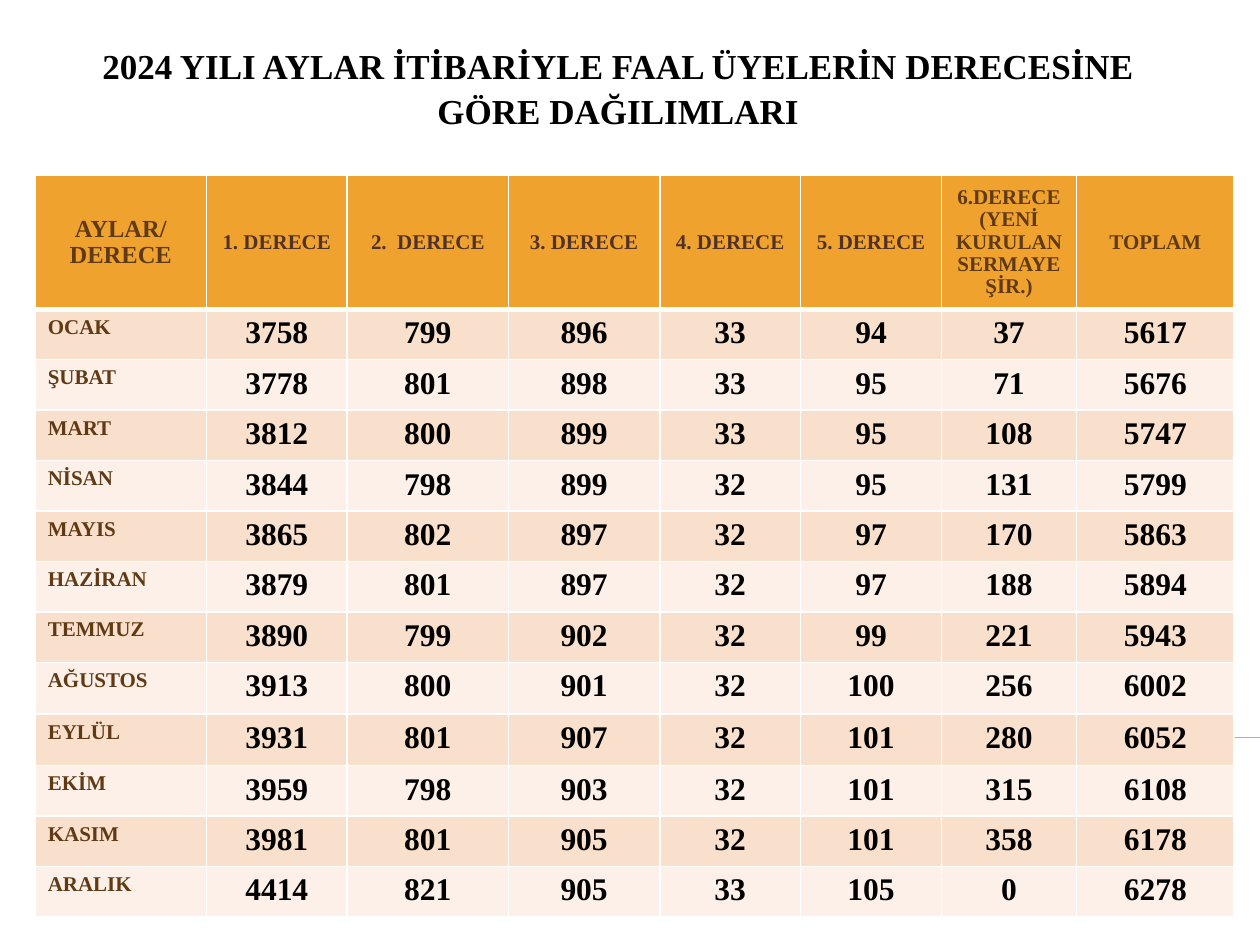
from lxml import etree
from pptx import Presentation
from pptx import util as u
from pptx.dml.color import RGBColor
from pptx.enum import shapes, text
from pptx.oxml import ns

FONT = "Times New Roman"
ORANGE, BROWN, DARK_BROWN = "F0A22E", "603A14", "523227"
BLACK, WHITE = "000000", "FFFFFF"
BANDS = ("F9E0CD", "FCF0E8")
THIN, THICK = 1, 3

TITLE = "2024 YILI AYLAR İTİBARİYLE FAAL ÜYELERİN DERECESİNE GÖRE DAĞILIMLARI"
HEADERS = [
    ("AYLAR/ DERECE", 14, BROWN),
    ("1. DERECE", 12, DARK_BROWN),
    ("2.  DERECE", 12, DARK_BROWN),
    ("3. DERECE", 12, DARK_BROWN),
    ("4. DERECE", 12, DARK_BROWN),
    ("5. DERECE", 12, DARK_BROWN),
    ("6.DERECE (YENİ KURULAN SERMAYE ŞİR.)", 12, BROWN),
    ("TOPLAM", 12, BROWN),
]
MONTHS = [
    ("OCAK", 3758, 799, 896, 33, 94, 37, 5617),
    ("ŞUBAT", 3778, 801, 898, 33, 95, 71, 5676),
    ("MART", 3812, 800, 899, 33, 95, 108, 5747),
    ("NİSAN", 3844, 798, 899, 32, 95, 131, 5799),
    ("MAYIS", 3865, 802, 897, 32, 97, 170, 5863),
    ("HAZİRAN", 3879, 801, 897, 32, 97, 188, 5894),
    ("TEMMUZ", 3890, 799, 902, 32, 99, 221, 5943),
    ("AĞUSTOS", 3913, 800, 901, 32, 100, 256, 6002),
    ("EYLÜL", 3931, 801, 907, 32, 101, 280, 6052),
    ("EKİM", 3959, 798, 903, 32, 101, 315, 6108),
    ("KASIM", 3981, 801, 905, 32, 101, 358, 6178),
    ("ARALIK", 4414, 821, 905, 33, 105, 0, 6278),
]
COLUMN_WIDTHS = [3.45, 2.84, 3.25, 3.05, 2.84, 2.84, 2.72, 3.18]
HEADER_HEIGHT, ROW_HEIGHT, TALL_ROW_HEIGHT = 2.68, 0.98, 1.04
TALL_MONTHS = ("AĞUSTOS", "EYLÜL")


def color(value):
    return RGBColor.from_string(value)


def write(frame, content, size, font_color, align, spacing=None):
    frame.word_wrap = True
    paragraph = frame.paragraphs[0]
    paragraph.text = content
    paragraph.alignment = align
    paragraph.line_spacing = spacing
    font = paragraph.font
    font.name, font.size, font.bold = FONT, u.Pt(size), True
    font.color.rgb = color(font_color)


def add_title(slide):
    shape = slide.shapes.add_textbox(u.Cm(0.71), u.Cm(0.74), u.Cm(23.5), u.Cm(1.6))
    shape.text_frame.vertical_anchor = text.MSO_ANCHOR.TOP
    write(shape.text_frame, TITLE, 20, BLACK, text.PP_ALIGN.CENTER, 1.05)


def add_rule(slide):
    rule = slide.shapes.add_connector(
        shapes.MSO_CONNECTOR.STRAIGHT, u.Cm(1.42), u.Cm(14.86), u.Cm(25.4), u.Cm(14.86)
    )
    rule.line.color.rgb = color(ORANGE)
    rule.line.width = u.Pt(0.75)
    etree.SubElement(rule._element.spPr, ns.qn("a:effectLst"))


def style_cell(cell, fill, top, bottom):
    properties = cell._tc.get_or_add_tcPr()
    for side, width in (("L", THIN), ("R", THIN), ("T", top), ("B", bottom)):
        border = etree.SubElement(properties, ns.qn(f"a:ln{side}"), w=str(u.Pt(width)))
        solid = etree.SubElement(border, ns.qn("a:solidFill"))
        etree.SubElement(solid, ns.qn("a:srgbClr"), val=WHITE)
    cell.fill.solid()
    cell.fill.fore_color.rgb = color(fill)


def fill_header(table):
    for cell, (label, size, font_color) in zip(table.rows[0].cells, HEADERS):
        style_cell(cell, ORANGE, THIN, THICK)
        cell.vertical_anchor = text.MSO_ANCHOR.MIDDLE
        write(cell.text_frame, label, size, font_color, text.PP_ALIGN.CENTER, 0.96)


def fill_month(table, index, month, values):
    cells = list(table.rows[index].cells)
    for cell in cells:
        style_cell(cell, BANDS[(index - 1) % 2], THICK if index == 1 else THIN, THIN)
    write(cells[0].text_frame, month, 12, BROWN, text.PP_ALIGN.LEFT)
    for cell, value in zip(cells[1:], values):
        write(cell.text_frame, str(value), 18, BLACK, text.PP_ALIGN.CENTER)


def add_member_table(slide):
    heights = [HEADER_HEIGHT] + [
        TALL_ROW_HEIGHT if month in TALL_MONTHS else ROW_HEIGHT for month, *_ in MONTHS
    ]
    table = slide.shapes.add_table(
        len(heights), len(COLUMN_WIDTHS), u.Cm(0.71), u.Cm(3.54),
        u.Cm(sum(COLUMN_WIDTHS)), u.Cm(sum(heights)),
    ).table
    table.horz_banding = False
    for column, width in zip(table.columns, COLUMN_WIDTHS):
        column.width = u.Cm(width)
    for row, height in zip(table.rows, heights):
        row.height = u.Cm(height)
    fill_header(table)
    for index, (month, *values) in enumerate(MONTHS, start=1):
        fill_month(table, index, month, values)


def main():
    presentation = Presentation()
    presentation.slide_width, presentation.slide_height = u.Cm(25.4), u.Cm(19.05)
    slide = presentation.slides.add_slide(presentation.slide_layouts[6])
    add_rule(slide)
    add_title(slide)
    add_member_table(slide)
    presentation.save("out.pptx")


if __name__ == "__main__":
    main()
